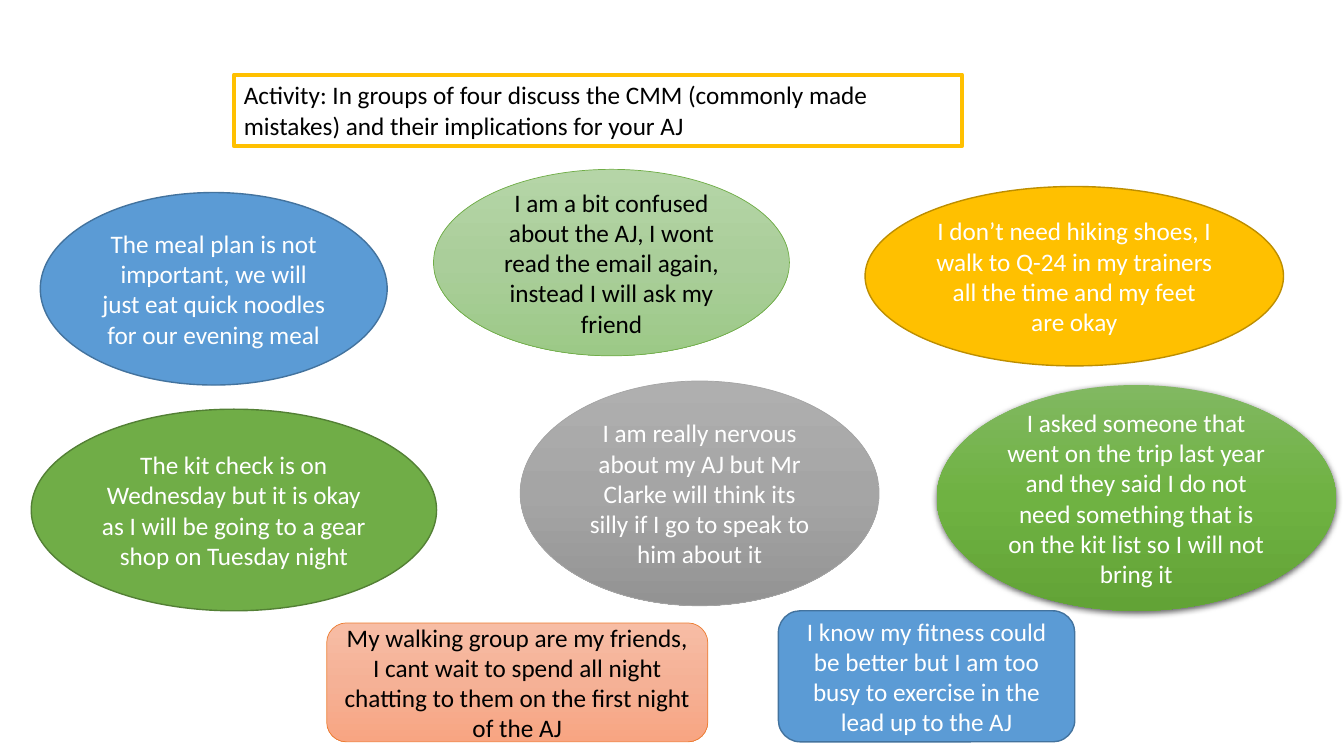
from copy import deepcopy
from lxml.etree import SubElement as Sub
from pptx import Presentation
from pptx.dml.color import RGBColor as RGB
from pptx.enum.shapes import MSO_SHAPE as Kind
from pptx.enum.text import MSO_ANCHOR as Anchor, MSO_AUTO_SIZE as Auto, PP_ALIGN as Align
from pptx.oxml.ns import qn
from pptx.util import Inches, Pt

HUE = {
    "black": "000000", "white": "FFFFFF", "blue": "5B9BD5", "navy": "43739E",
    "gold": "FFC000", "bronze": "BD8E00", "green": "70AD47", "forest": "538035",
    "gray": "A5A5A5", "orange": "ED7D31",
    "mint": ["B5D5A7", "AACE9A", "9CC987"],
    "leaf": ["81B861", "6FB242", "62A336"],
    "steel": ["AFAFAF", "A5A5A5", "939393"],
    "peach": ["F7BDA5", "F5B196", "F8A582"],
}
FONT = {"name": "Calibri", "size": Pt(18)}
FRAME = {"word_wrap": True, "vertical_anchor": Anchor.MIDDLE}
OVAL, ROUND = Kind.OVAL, Kind.ROUNDED_RECTANGLE


def write(frame, text, hue, align):
    para = frame.paragraphs[0]
    para.alignment = align
    run = para.add_run()
    run.text = text
    for key, val in FONT.items():
        setattr(run.font, key, val)
    run.font.color.rgb = RGB.from_string(HUE[hue])


def paint(fill, shape, hues):
    if isinstance(hues, str):
        fill.solid()
        fill.fore_color.rgb = RGB.from_string(hues)
        return
    fill.gradient()
    fill.gradient_angle = 270
    first = shape.element.spPr.find(".//" + qn("a:gs"))
    first.addnext(deepcopy(first))
    for stop, hue, spot in zip(fill.gradient_stops, hues, (0, 0.5, 1)):
        stop.color.rgb = RGB.from_string(hue)
        stop.position = spot


deck = Presentation()
deck.slide_width, deck.slide_height = Inches(13.33), Inches(7.5)
slide = deck.slides.add_slide(deck.slide_layouts[6])

task = slide.shapes.add_textbox(*map(Inches, (2.32, 0.74, 7.22, 0.71)))
task.line.color.rgb = RGB.from_string(HUE["gold"])
task.line.width = Pt(3)
task.text_frame.word_wrap = True
task.text_frame.auto_size = Auto.SHAPE_TO_FIT_TEXT
write(task.text_frame, "Activity: In groups of four discuss the CMM (commonly made mistakes) "
      "and their implications for your AJ", "black", Align.LEFT)

views = [
    (OVAL, (0.4, 1.91, 3.44, 1.91), "blue", "navy", 1, "white",
     "The meal plan is not important, we will just eat quick noodles for our evening meal"),
    (OVAL, (8.58, 1.85, 4.15, 1.78), "gold", "bronze", 1, "white",
     "I don’t need hiking shoes, I walk to Q-24 in my trainers all the time and my feet are okay"),
    (OVAL, (0.31, 4.06, 4.02, 2), "green", "forest", 1, "white",
     "The kit check is on Wednesday but it is okay as I will be going to a gear shop on Tuesday night"),
    (OVAL, (4.3, 1.68, 3.53, 1.85), "mint", "green", 0.5, "black",
     "I am a bit confused about the AJ, I wont read the email again, instead I will ask my friend"),
    (OVAL, (9.29, 3.82, 3.96, 2.24), "leaf", None, 0, "white",
     "I asked someone that went on the trip last year and they said I do not need something "
     "that is on the kit list so I will not bring it"),
    (OVAL, (5.16, 3.78, 3.56, 2.23), "steel", "gray", 0.5, "white",
     "I am really nervous about my AJ but Mr Clarke will think its silly if I go to speak to him about it"),
    (ROUND, (3.24, 6.18, 3.78, 1.18), "peach", "orange", 0.5, "black",
     "My walking group are my friends, I cant wait to spend all night chatting to them "
     "on the first night of the AJ"),
    (ROUND, (7.72, 6.06, 2.94, 1.3), "blue", "navy", 1, "white",
     "I know my fitness could be better but I am too busy to exercise in the lead up to the AJ"),
]

for kind, place, fill, edge, width, ink, text in views:
    shape = slide.shapes.add_shape(kind, *map(Inches, place))
    shape.shadow.inherit = False
    paint(shape.fill, shape, HUE[fill])
    if edge:
        shape.line.color.rgb = RGB.from_string(HUE[edge])
        shape.line.width = Pt(width)
    else:
        shape.line.fill.background()
        glow = Sub(shape.element.spPr.find(qn("a:effectLst")), qn("a:outerShdw"),
                   blurRad=str(Pt(4.5)), dist=str(Pt(1.5)), dir="5400000",
                   algn="ctr", rotWithShape="0")
        tone = Sub(glow, qn("a:srgbClr"), val=HUE["black"])
        Sub(tone, qn("a:alpha"), val="63000")
    for key, val in FRAME.items():
        setattr(shape.text_frame, key, val)
    write(shape.text_frame, text, ink, Align.CENTER)

deck.save("out.pptx")
